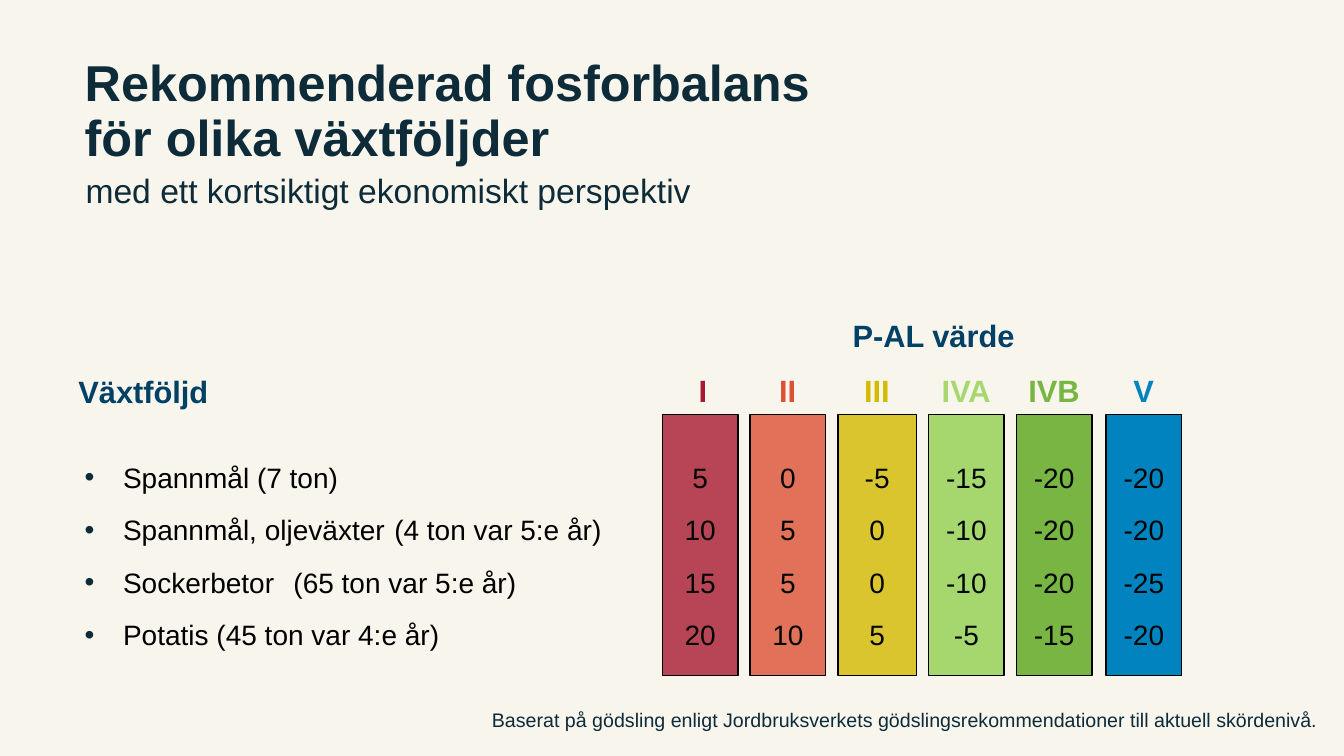
from lxml import etree
from pptx import Presentation
from pptx import util as u
from pptx.dml.color import RGBColor
from pptx.enum import shapes, text
from pptx.oxml.ns import qn

DARK, NAVY, BLACK, NUMBER = "0D2B38", "004165", "000000", "010605"
INSET = 0.1
CLASSES = [
    ("I", "A71930", "A71930", 6.57, 0.75, 80),
    ("II", "DC5034", "DC5034", 7.44, 0.75, 80),
    ("III", "D4BA00", "D4BA00", 8.31, 0.78, 80),
    ("IVA", "A7D76F", "92D050", 9.21, 0.75, 80),
    ("IVB", "78B642", "58A618", 10.08, 0.75, 80),
    ("V", "0083BE", "0083BE", 10.97, 0.75, 100),
]
ROTATIONS = [
    ("Spannmål (7 ton)", None, [5, 0, -5, -15, -20, -20]),
    ("Spannmål, oljeväxter\t(4 ton var 5:e år)", 3.07, [10, 5, 0, -10, -20, -20]),
    ("Sockerbetor\t(65 ton var 5:e år)", 2.07, [15, 5, 0, -10, -20, -25]),
    ("Potatis (45 ton var 4:e år)", None, [20, 10, 5, -5, -15, -20]),
]


def rgb(value):
    return RGBColor.from_string(value)


class SlideBuilder:
    """Holds the style and the current slide, and adds its elements."""

    def __init__(self, background, font="Arial"):
        self.font = font
        self.deck = Presentation()
        self.deck.slide_width, self.deck.slide_height = u.Inches(13.33), u.Inches(7.5)
        self.slide = self.deck.slides.add_slide(self.deck.slide_layouts[1])
        fill = self.slide.background.fill
        fill.solid()
        fill.fore_color.rgb = rgb(background)

    def format(self, run, size, color, bold=False):
        run.font.name, run.font.size, run.font.bold = self.font, u.Pt(size), bold
        run.font.color.rgb = rgb(color)

    def add_runs(self, paragraph, parts, size, bold=False):
        for wording, color in parts:
            run = paragraph.add_run()
            run.text = wording
            self.format(run, size, color, bold)

    def set_tabs(self, paragraph, stops):
        tabs = etree.SubElement(paragraph._p.get_or_add_pPr(), qn("a:tabLst"))
        for position, align in stops:
            etree.SubElement(tabs, qn("a:tab"), pos=str(u.Inches(position)), algn=align)

    def set_bullet(self, paragraph, indent, color):
        props = paragraph._p.get_or_add_pPr()
        props.set("marL", str(u.Inches(indent)))
        props.set("indent", str(u.Inches(-indent)))
        bullet_color = etree.SubElement(props, qn("a:buClr"))
        etree.SubElement(bullet_color, qn("a:srgbClr"), val=color)
        etree.SubElement(props, qn("a:buFont"), typeface=self.font)
        etree.SubElement(props, qn("a:buChar"), char="•")

    def placeholder(self, index, left, top, width, height, anchor):
        holder = self.slide.placeholders[index]
        self.slide.shapes._spTree.append(holder._element)
        holder.left, holder.top = u.Inches(left), u.Inches(top)
        holder.width, holder.height = u.Inches(width), u.Inches(height)
        frame = holder.text_frame
        frame.auto_size = text.MSO_AUTO_SIZE.NONE
        frame.vertical_anchor = anchor
        frame.word_wrap = True
        return frame

    def title(self, wording, *place):
        frame = self.placeholder(0, *place, text.MSO_ANCHOR.BOTTOM)
        frame.text = wording
        heading = frame.paragraphs[0]
        heading.alignment, heading.line_spacing = text.PP_ALIGN.LEFT, 0.9
        self.format(heading.runs[0], 36, DARK, True)

    def label(self, wording, left, top, width, height, size, color, bold=False, spacing=1.0):
        box = self.slide.shapes.add_textbox(*map(u.Inches, (left, top, width, height)))
        frame = box.text_frame
        frame.word_wrap = True
        frame.text = wording
        frame.paragraphs[0].line_spacing = spacing
        self.format(frame.paragraphs[0].runs[0], size, color, bold)
        return frame

    def column(self, left, width, color, opacity):
        bar = self.slide.shapes.add_shape(
            shapes.MSO_SHAPE.RECTANGLE, *map(u.Inches, (left, 4.11, width, 2.59)))
        bar.shadow.inherit = False
        bar.fill.solid()
        bar.fill.fore_color.rgb = rgb(color)
        if opacity < 100:
            shade = bar._element.spPr.find(".//" + qn("a:srgbClr"))
            etree.SubElement(shade, qn("a:alpha"), val=str(opacity * 1000))
        bar.line.color.rgb = rgb(BLACK)
        bar.line.width = u.Pt(1)

    def class_header(self, left, centres):
        frame = self.label("P-AL värde", left, 2.91, 4.86, 1.14, 22, NAVY, True, 1.5)
        frame.paragraphs[0].alignment = text.PP_ALIGN.CENTER
        names = frame.add_paragraph()
        names.line_spacing = 1.5
        self.set_tabs(names, [(centre - left - INSET, "ctr") for centre in centres[1:]])
        parts = [(("\t" if i else "") + name, color)
                 for i, (name, color, *_) in enumerate(CLASSES)]
        self.add_runs(names, parts, 22, True)

    def rotation_list(self, left, centres):
        frame = self.placeholder(1, left, 4.35, 12.24, 2.67, text.MSO_ANCHOR.TOP)
        for i, (rotation, detail_stop, balances) in enumerate(ROTATIONS):
            row = frame.add_paragraph() if i else frame.paragraphs[0]
            row.line_spacing = 1.5
            row.space_before = u.Pt(1.5 if i else 0)
            self.set_bullet(row, 0.38, DARK)
            stops = [(detail_stop, "l")] if detail_stop else []
            stops += [(centre - left - INSET, "ctr") for centre in centres]
            self.set_tabs(row, stops)
            numbers = "".join(f"\t{balance}" for balance in balances)
            self.add_runs(row, [(rotation, BLACK), (numbers, NUMBER)], 20)


def main():
    builder = SlideBuilder("F8F5ED")
    centres = [left + width / 2 for _, _, _, left, width, _ in CLASSES]
    builder.title("Rekommenderad fosforbalans för olika växtföljder", 0.74, 0.44, 8.09, 1.27)
    builder.label("med ett kortsiktigt ekonomiskt perspektiv", 0.75, 1.64, 6.72, 0.5, 24, DARK)
    heading = builder.label("Växtföljd", 0.43, 3.47, 2.81, 0.59, 22, NAVY, True, 1.5)
    heading.paragraphs[0]._p.get_or_add_pPr().set("marL", str(u.Inches(0.25)))
    builder.class_header(6.83, centres)
    for _, _, color, left, width, opacity in CLASSES:
        builder.column(left, width, color, opacity)
    builder.rotation_list(0.74, centres)
    builder.label(
        "Baserat på gödsling enligt Jordbruksverkets gödslingsrekommendationer "
        "till aktuell skördenivå.", 4.78, 6.97, 9.19, 0.34, 14, DARK)
    builder.deck.save("out.pptx")


if __name__ == "__main__":
    main()
